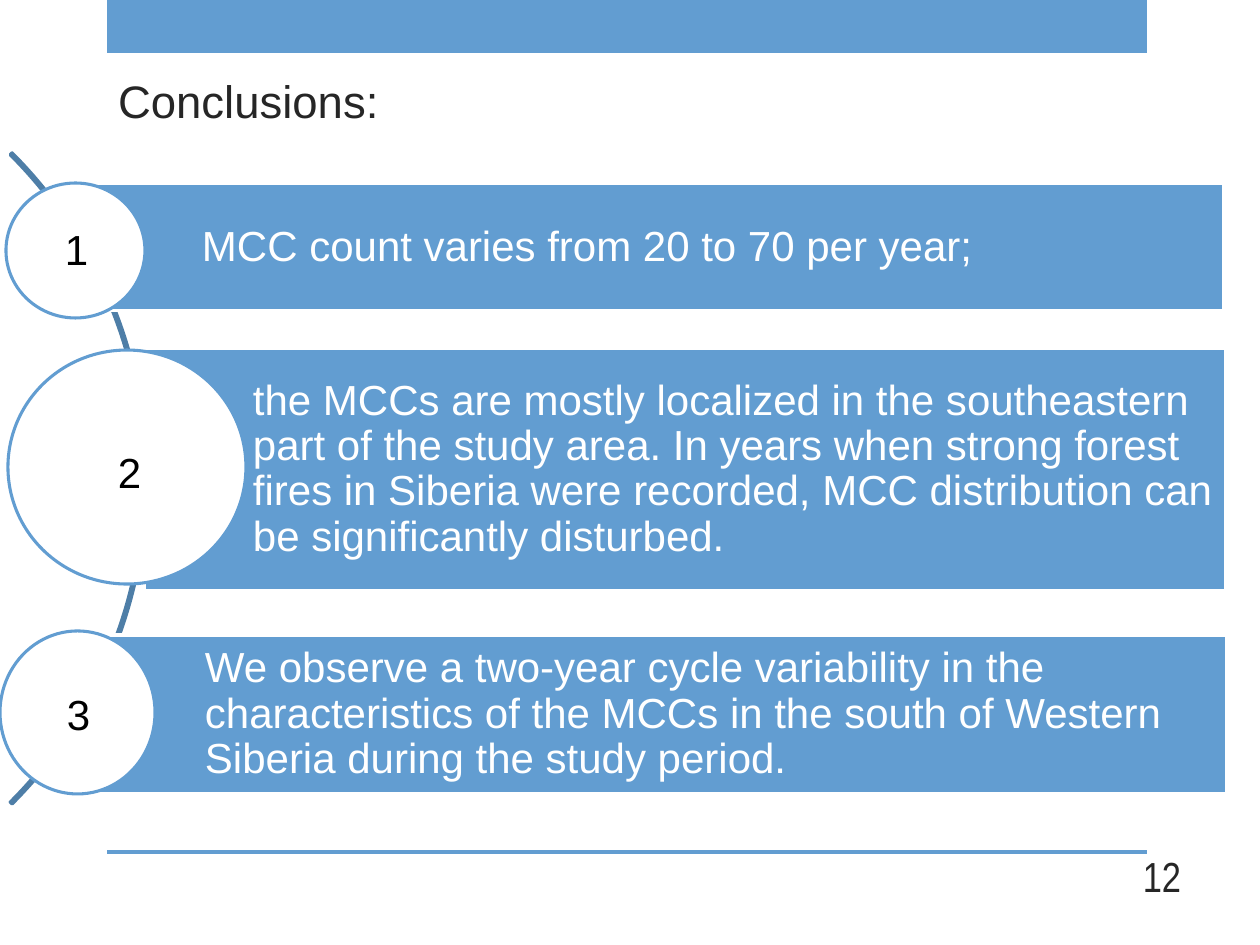
from pptx import Presentation
from pptx.dml.color import RGBColor
from pptx.enum.shapes import MSO_SHAPE
from pptx.enum.text import MSO_ANCHOR, PP_ALIGN
from pptx.util import Pt

PX = 914400 / 126
BLUE, WHITE, DARK = "629DD1", "FFFFFF", "262626"

# bar box, circle box, corner of the number, text
POINTS = [
    ((94, 184, 1130, 127), (6, 183, 139, 135), (52, 218),
     "MCC count varies from 20 to 70 per year;"),
    ((145, 348, 1081, 243), (8, 350, 238, 234), (105, 441),
     "the MCCs are mostly localized in the southeastern part of the study "
     "area. In years when strong forest fires in Siberia were recorded, "
     "MCC distribution can be significantly disturbed."),
    ((97, 635, 1130, 159), (0, 631, 155, 163), (54, 683),
     "We observe a two-year cycle variability in the characteristics of the "
     "MCCs in the south of Western Siberia during the study period."),
]


def px(n):
    return round(n * PX)


def scale(box):
    return [px(n) for n in box]


def paint(part, color):
    part.solid()
    part.fore_color.rgb = RGBColor.from_string(color)


def write(shape, text, size=24, font="Arial", color="000000", wrap=True,
          anchor=MSO_ANCHOR.TOP, align=PP_ALIGN.LEFT, pads=(13, 6, 13, 6),
          lead=1.0):
    frame = shape.text_frame
    frame.word_wrap = wrap
    frame.vertical_anchor = anchor
    (frame.margin_left, frame.margin_top,
     frame.margin_right, frame.margin_bottom) = scale(pads)
    para = frame.paragraphs[0]
    para.alignment = align
    para.line_spacing = lead
    run = para.add_run()
    run.text = text
    run.font.size = Pt(size)
    run.font.name = font
    paint(run.font.fill, color)


def draw(slide, kind, box, fill=None, line=None):
    shape = slide.shapes.add_shape(kind, *scale(box))
    shape.shadow.inherit = False
    if fill:
        paint(shape.fill, fill)
    else:
        shape.fill.background()
    if line:
        paint(shape.line.fill, line)
        shape.line.width = Pt(1.75)
    else:
        shape.line.fill.background()
    return shape


def label(slide, box, text, **style):
    write(slide.shapes.add_textbox(*scale(box)), text, **style)


def head(slide, box, text):
    title = slide.shapes.title
    title.left, title.top, title.width, title.height = scale(box)
    write(title, text, size=26, color=DARK, anchor=MSO_ANCHOR.BOTTOM)


def arc(slide):
    """Draw the thin curve that passes behind the circles."""
    curve = draw(slide, MSO_SHAPE.BLOCK_ARC, (-774, 18, 921, 921),
                 line="4E7EA7")
    for i, value in enumerate((189, 27, 0.003)):
        curve.adjustments[i] = value


def point(slide, bar, ring, text):
    """Draw one conclusion: its bar with text and its circle."""
    shape = draw(slide, MSO_SHAPE.RECTANGLE, bar, BLUE, WHITE)
    write(shape, text, color=WHITE, anchor=MSO_ANCHOR.MIDDLE,
          pads=(108, 9, 9, 9), lead=0.9)
    draw(slide, MSO_SHAPE.OVAL, ring, WHITE, BLUE)


def main():
    deck = Presentation()
    deck.slide_width, deck.slide_height = px(1260), px(945)
    slide = deck.slides.add_slide(deck.slide_layouts[5])
    for top, height in ((0, 53), (850, 4)):
        draw(slide, MSO_SHAPE.RECTANGLE, (107, top, 1040, height), BLUE)
    head(slide, (105, 29, 859, 105), "Сonclusions:")
    arc(slide)
    for bar, ring, _, text in POINTS:
        point(slide, bar, ring, text)
    for number, (_, _, spot, _) in enumerate(POINTS, 1):
        label(slide, (*spot, 49, 63), str(number), wrap=False)
    label(slide, (1089, 851, 105, 50), "12", font="Arial Narrow", color=DARK,
          anchor=MSO_ANCHOR.MIDDLE, align=PP_ALIGN.RIGHT)
    deck.save("out.pptx")


if __name__ == "__main__":
    main()
